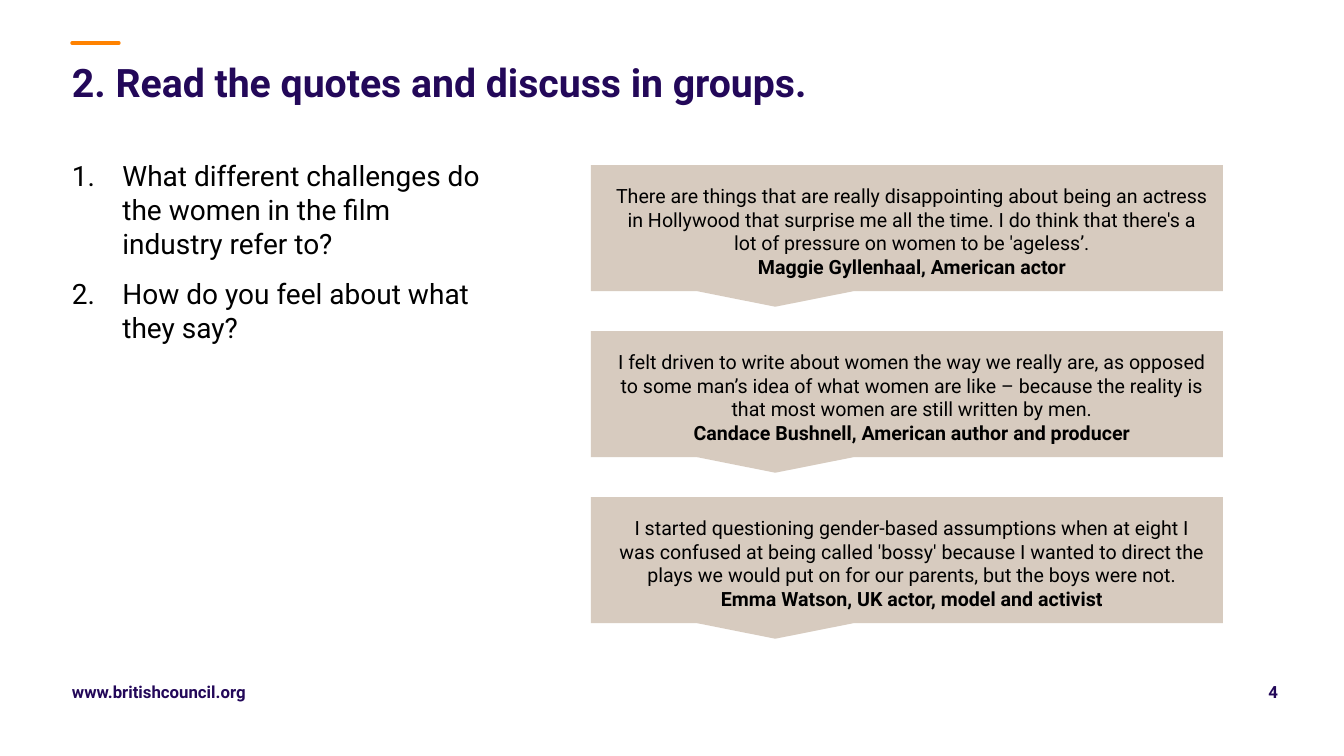
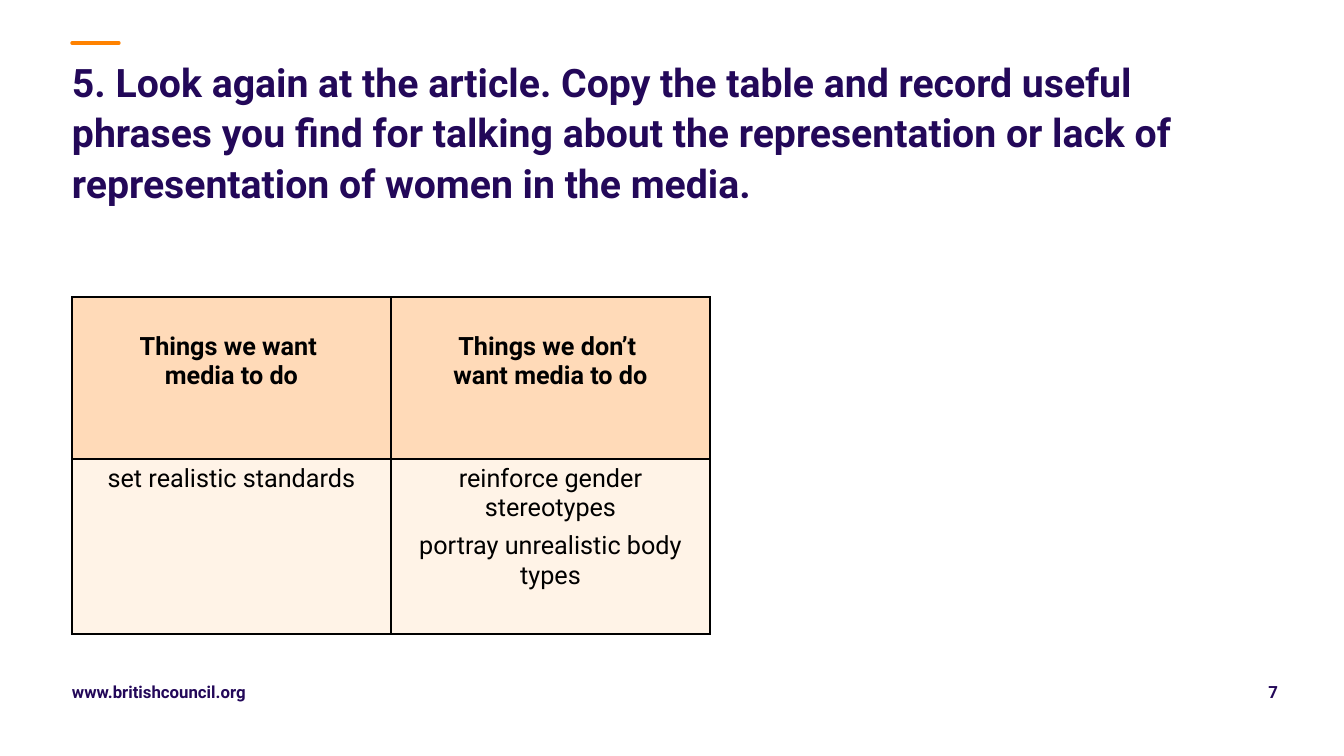
from lxml import etree
from pptx import Presentation
from pptx import util as u
from pptx.dml.color import RGBColor
from pptx.enum import shapes, text
from pptx.oxml import ns

EMU_PER_PX = 914400 / 100.8
COLORS = {
    "accent": "FF8200",
    "brand": "230859",
    "text": "000000",
    "callout": "D7CBBF",
    "header": "FFDAB8",
    "body": "FFF3E7",
    "border": "000000",
}
FONT = "Roboto"
LEFT, RIGHT = 72, 1278
WEBSITE = "www.britishcouncil.org"
CENTER, RIGHT_ALIGN = text.PP_ALIGN.CENTER, text.PP_ALIGN.RIGHT

QUESTIONS = [
    "What different challenges do the women in the film industry refer to?",
    "How do you feel about what they say?",
]
QUOTES = [
    ("There are things that are really disappointing about being an actress in Hollywood "
     "that surprise me all the time. I do think that there's a lot of pressure on women "
     "to be 'ageless’.",
     "Maggie Gyllenhaal, American actor"),
    ("I felt driven to write about women the way we really are, as opposed to some man’s "
     "idea of what women are like – because the reality is that most women are still "
     "written by men.",
     "Candace Bushnell, American author and producer"),
    ("I started questioning gender-based assumptions when at eight I was confused at being "
     "called 'bossy' because I wanted to direct the plays we would put on for our parents, "
     "but the boys were not.",
     "Emma Watson, UK actor, model and activist"),
]
HEADINGS = ["Things we want \vmedia to do", "Things we don’t \vwant media to do"]
PHRASES = [
    ["set realistic standards"],
    ["reinforce gender stereotypes", "portray unrealistic body types"],
]


def px(n):
    return u.Emu(round(n * EMU_PER_PX))


def rgb(name):
    return RGBColor.from_string(COLORS[name])


def sub(parent, tag, **attrs):
    return etree.SubElement(parent, ns.qn(tag), attrs)


class Deck:
    def __init__(self):
        self.prs = Presentation()
        self.prs.slide_width, self.prs.slide_height = px(1344), px(756)
        self.s = None

    def slide(self, title, number):
        """Start a slide with the shared accent line, title and footer."""
        self.s = self.prs.slides.add_slide(self.prs.slide_layouts[6])
        self.accent_line()
        p = self.text_box(LEFT, 55, RIGHT - LEFT, 72, [title], 28, "brand", bold=True)[0]
        p.line_spacing = 1.07
        p.space_after = u.Pt(8)
        bottom = text.MSO_ANCHOR.BOTTOM
        self.text_box(LEFT, 682, 758, 20, [WEBSITE], 12, "brand", True, anchor=bottom)
        self.text_box(RIGHT - 55, 682, 55, 20, [str(number)], 12, "brand", True,
                      RIGHT_ALIGN, bottom)

    def accent_line(self):
        line = self.s.shapes.add_connector(
            shapes.MSO_CONNECTOR.STRAIGHT, px(LEFT), px(43), px(119), px(43))
        line.line.color.rgb = rgb("accent")
        line.line.width = u.Pt(2.4)
        line.line._get_or_add_ln().set("cap", "rnd")
        sub(line._element.spPr, "a:effectLst")

    def set_lines(self, tf, lines, size, color="text", bold=False, align=None):
        """Fill a text frame, one paragraph per line, and return the paragraphs."""
        for i, line in enumerate(lines):
            p = tf.add_paragraph() if i else tf.paragraphs[0]
            p.text = line
            p.alignment = align
            for r in p.runs:
                r.font.name, r.font.size, r.font.bold = FONT, u.Pt(size), bold
                r.font.color.rgb = rgb(color)
        return tf.paragraphs

    def text_box(self, x, y, w, h, lines, size, color="text", bold=False, align=None,
                 anchor=text.MSO_ANCHOR.TOP):
        tf = self.s.shapes.add_textbox(px(x), px(y), px(w), px(h)).text_frame
        tf.word_wrap = True
        tf.vertical_anchor = anchor
        tf.margin_left = tf.margin_top = tf.margin_right = tf.margin_bottom = 0
        return self.set_lines(tf, lines, size, color, bold, align)

    def numbered_list(self, x, y, w, h, items):
        indent = u.Inches(0.5)
        for p in self.text_box(x, y, w, h, items, 20):
            pPr = p._p.get_or_add_pPr()
            pPr.set("marL", str(indent))
            pPr.set("indent", str(-indent))
            sub(pPr, "a:buAutoNum", type="arabicPeriod")
            p.space_after = u.Pt(12)

    def quote(self, x, y, w, h, words, speaker):
        sp = self.s.shapes.add_shape(
            shapes.MSO_SHAPE.RECTANGULAR_CALLOUT, px(x), px(y), px(w), px(h))
        sp.shadow.inherit = False
        sp.fill.solid()
        sp.fill.fore_color.rgb = rgb("callout")
        sp.line.fill.background()
        tf = sp.text_frame
        tf.word_wrap = True
        tf.vertical_anchor = text.MSO_ANCHOR.TOP
        tf.margin_left, tf.margin_right = px(24), px(14)
        tf.margin_top, tf.margin_bottom = px(19), px(5)
        paragraphs = self.set_lines(tf, [words, speaker], 14, align=CENTER)
        paragraphs[1].runs[0].font.bold = True

    def cell(self, cell, lines, fill, bold=False):
        tcPr = cell._tc.get_or_add_tcPr()
        for side in ("a:lnL", "a:lnR", "a:lnT", "a:lnB"):
            ln = sub(tcPr, side, w=str(u.Pt(1)))
            sub(sub(ln, "a:solidFill"), "a:srgbClr", val=COLORS["border"])
        cell.fill.solid()
        cell.fill.fore_color.rgb = rgb(fill)
        return self.set_lines(cell.text_frame, lines, 18, bold=bold, align=CENTER)

    def phrase_table(self, x, y, col_width, row_heights, headings, phrases):
        table = self.s.shapes.add_table(
            2, len(headings), px(x), px(y), px(col_width * len(headings)),
            px(sum(row_heights))).table
        table.horz_banding = False
        for row, height in zip(table.rows, row_heights):
            row.height = px(height)
        for col, (heading, lines) in enumerate(zip(headings, phrases)):
            table.columns[col].width = px(col_width)
            head = table.cell(0, col)
            self.cell(head, [heading], "header", bold=True)
            head.margin_top = px(35)
            for p in self.cell(table.cell(1, col), lines, "body"):
                p.space_after = u.Pt(6)


def main():
    deck = Deck()

    deck.slide("2. Read the quotes and discuss in groups.", 4)
    deck.numbered_list(LEFT, 159, 410, 496, QUESTIONS)
    for i, (words, speaker) in enumerate(QUOTES):
        deck.quote(591, 165 + 166 * i, 632, 126, words, speaker)

    deck.slide("5. Look again at the article. Copy the table and record useful phrases you "
               "find for talking about the representation or lack of representation of "
               "women in the media.", 7)
    deck.phrase_table(LEFT, 297, 319, (162, 175), HEADINGS, PHRASES)

    deck.prs.save("out.pptx")


if __name__ == "__main__":
    main()
